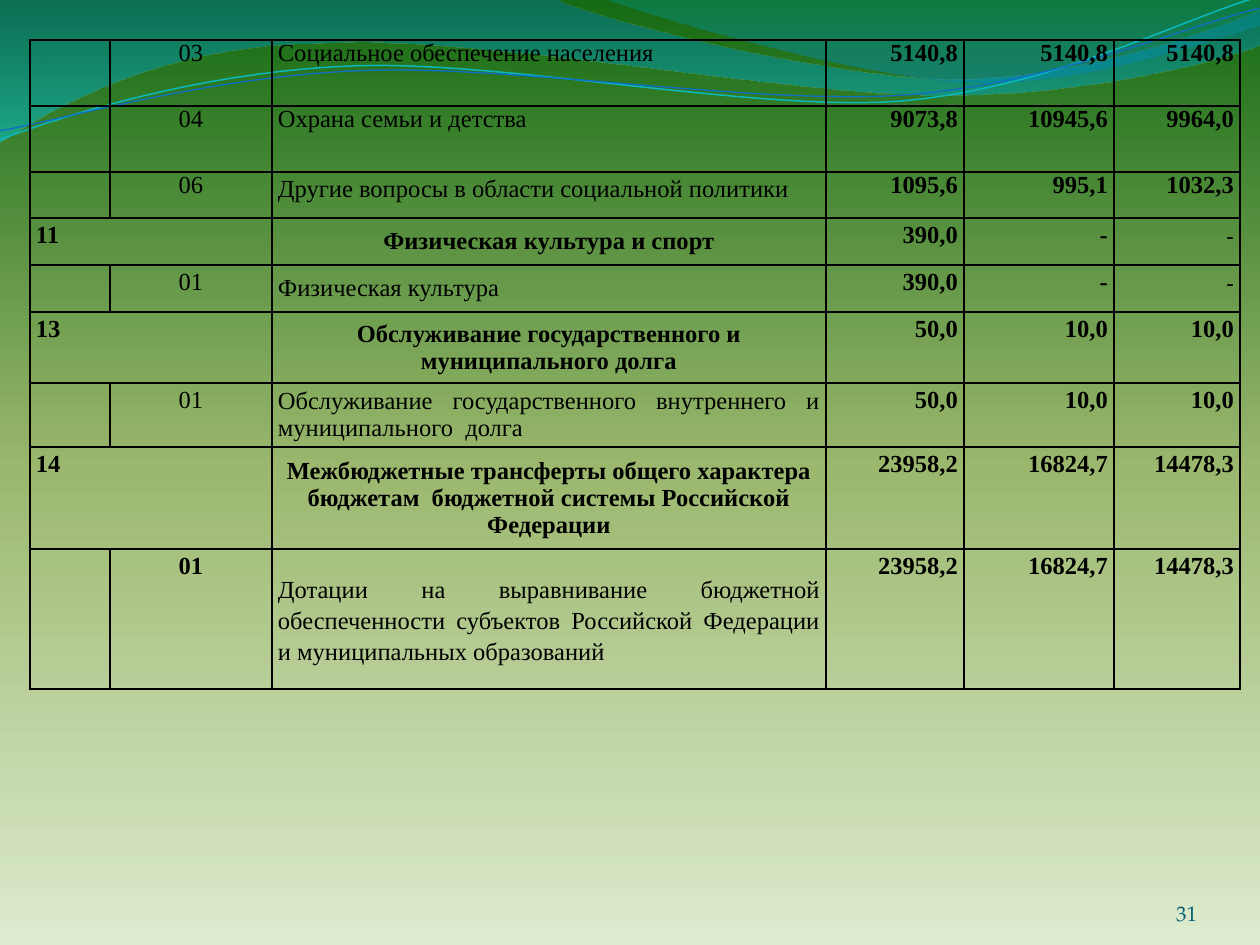
from lxml import etree
from pptx import Presentation
from pptx.dml.color import RGBColor
from pptx.enum.text import MSO_ANCHOR, PP_ALIGN
from pptx.oxml import parse_xml
from pptx.oxml.ns import qn
from pptx.util import Pt

TOP, MID, BASE = MSO_ANCHOR.TOP, MSO_ANCHOR.MIDDLE, MSO_ANCHOR.BOTTOM
LEFT, MIDST, RIGHT, JUST = PP_ALIGN.LEFT, PP_ALIGN.CENTER, PP_ALIGN.RIGHT, PP_ALIGN.JUSTIFY
NS = "http://schemas.openxmlformats.org/drawingml/2006/main"
PX = 914400 / 126
SERIF = "Times New Roman"
HUES = {
    "ink": "000000", "page": "045D75",
    "pale": "DDEBCF", "moss": "9CB86E", "leaf": "156B13",
    "deep": "0074A1", "aqua": "00C6CF", "teal": "00A1A9", "blue": "008BBF",
    "cyan": "0AB8BF", "navy": "0F6FC6",
}


def put(frame, text, font=SERIF, size=14, bold=False, hue="ink", align=LEFT, loose=False):
    para = frame.paragraphs[0]
    para.alignment = align
    if loose:
        para.line_spacing = 1.15
        para.space_after = Pt(10)
    run = para.add_run()
    run.text = text
    run.font.name = font
    run.font.size = Pt(size)
    run.font.bold = bold
    run.font.color.rgb = RGBColor.from_string(HUES[hue])


def blend(fill, node, angle, stops):
    fill.gradient()
    fill.gradient_angle = angle
    group = node.xpath(".//a:gsLst")[0]
    for old in list(group):
        group.remove(old)
    for spot, hue, alpha in stops:
        stop = etree.SubElement(group, qn("a:gs"), pos=str(spot * 1000))
        tint = etree.SubElement(stop, qn("a:srgbClr"), val=HUES[hue])
        if alpha < 100:
            etree.SubElement(tint, qn("a:alpha"), val=str(alpha * 1000))


deck = Presentation()
deck.slide_width, deck.slide_height = round(1260 * PX), round(945 * PX)
slide = deck.slides.add_slide(deck.slide_layouts[6])
blend(slide.background.fill, slide.element, 90,
      [(0, "pale", 100), (50, "moss", 100), (100, "leaf", 100)])

waves = [
    ([(0, -1), (554, -1), (600, 21, 837, 79, 955, 79), (1075, 79, 1207, 33, 1260, 11),
      (1261, 45), (1239, 55, 1096, 96, 940, 95), (784, 95, 481, 35, 324, 43),
      (163, 44, 58, 105, -1, 142)],
     [(0, "deep", 45), (100, "aqua", 55)], None, 0),
    ([(604, -1), (641, 14, 859, 78, 969, 82), (1079, 87, 1211, 40, 1260, 26), (1260, 0)],
     [(0, "teal", 30), (80, "blue", 45)], None, 0),
    ([(-2, 110), (58, 90, 199, 52, 350, 53), (499, 53, 745, 117, 896, 114),
      (1049, 109, 1184, 45, 1260, 27)], None, "cyan", 0.85),
    ([(-2, 101), (57, 94, 207, 57, 357, 58), (509, 58, 750, 111, 902, 108),
      (1052, 104, 1188, 52, 1262, 38)], None, "navy", 0.75),
]
pair = None
for steps, stops, hue, width in waves:
    home = slide.shapes
    if not stops:
        pair = pair or slide.shapes.add_group_shape()
        home = pair.shapes
    dots = [step[i:i + 2] for step in steps[1:] for i in range(0, len(step), 2)]
    pen = home.build_freeform(*steps[0], scale=PX)
    pen.add_line_segments(dots, close=stops is not None)
    wave = pen.convert_to_shape()
    legs = iter(wave.element.xpath(".//a:lnTo"))
    for step in steps[1:]:
        leg = next(legs)
        if len(step) == 6:
            curve = etree.Element(qn("a:cubicBezTo"))
            leg.addprevious(curve)
            for part in (leg, next(legs), next(legs)):
                curve.append(part[0])
                part.getparent().remove(part)
    wave.shadow.inherit = False
    if stops:
        blend(wave.fill, wave.element, 270, stops)
        wave.line.fill.background()
    else:
        wave.rotation = 357.3
        wave.fill.background()
        wave.line.color.rgb = RGBColor.from_string(HUES[hue])
        wave.line.width = Pt(width)

box = slide.shapes.add_textbox(*[round(n * PX) for n in (1092, 876, 105, 50)])
frame = box.text_frame
frame.word_wrap = True
frame.vertical_anchor = BASE
frame.margin_left = frame.margin_right = frame.margin_top = frame.margin_bottom = 0
put(frame, "31", font="TeX Gyre Pagella", size=12, hue="page", align=RIGHT)

cols = [80, 162, 554, 138, 150, 126]
rows = [
    (66, "", "03", "Социальное обеспечение населения", ["5140,8", "5140,8", "5140,8"]),
    (66, "", "04", "Охрана семьи и детства", ["9073,8", "10945,6", "9964,0"]),
    (46, "", "06", "Другие вопросы в области социальной политики", ["1095,6", "995,1", "1032,3"]),
    (47, "11", "", "Физическая культура и спорт", ["390,0", "-", "-"]),
    (47, "", "01", "Физическая культура", ["390,0", "-", "-"]),
    (71, "13", "", "Обслуживание государственного и муниципального долга",
     ["50,0", "10,0", "10,0"]),
    (64, "", "01", "Обслуживание государственного внутреннего и муниципального  долга",
     ["50,0", "10,0", "10,0"]),
    (102, "14", "", "Межбюджетные трансферты общего характера бюджетам  "
     "бюджетной системы Российской Федерации", ["23958,2", "16824,7", "14478,3"]),
    (140, "", "01", "Дотации на выравнивание бюджетной обеспеченности субъектов "
     "Российской Федерации и муниципальных образований", ["23958,2", "16824,7", "14478,3"]),
]
tall = sum(row[0] for row in rows)
table = slide.shapes.add_table(len(rows), len(cols), *[
    round(n * PX) for n in (30, 40, sum(cols), tall)]).table
table.first_row = table.horz_banding = False
for col, width in zip(table.columns, cols):
    col.width = round(width * PX)

for r, (high, code, sub, name, sums) in enumerate(rows):
    table.rows[r].height = round(high * PX)
    late = r > 2
    last = r == len(rows) - 1
    for c in range(len(cols)):
        cell = table.cell(r, c)
        cell.margin_left = cell.margin_right = round(6 * PX)
        cell.margin_top = cell.margin_bottom = 0
        cell.vertical_anchor = MID if c == 2 and late else TOP
        cell.fill.background()
        props = cell._tc.get_or_add_tcPr()
        for i, side in enumerate(("lnL", "lnR", "lnT", "lnB")):
            props.insert(i, parse_xml(
                f'<a:{side} xmlns:a="{NS}" w="12700"><a:solidFill>'
                f'<a:srgbClr val="{HUES["ink"]}"/></a:solidFill></a:{side}>'))
    if code:
        table.cell(r, 0).merge(table.cell(r, 1))
        put(table.cell(r, 0).text_frame, code, bold=True, loose=True)
    else:
        put(table.cell(r, 1).text_frame, sub, bold=last, align=MIDST, loose=late)
    put(table.cell(r, 2).text_frame, name, bold=bool(code),
        align=MIDST if code else JUST, loose=r == 2 or last)
    for c, value in enumerate(sums, 3):
        thin = c == 5 and value == "-"
        put(table.cell(r, c).text_frame, value, font="Calibri" if thin else SERIF,
            bold=not thin, align=RIGHT, loose=late)

deck.save("out.pptx")
